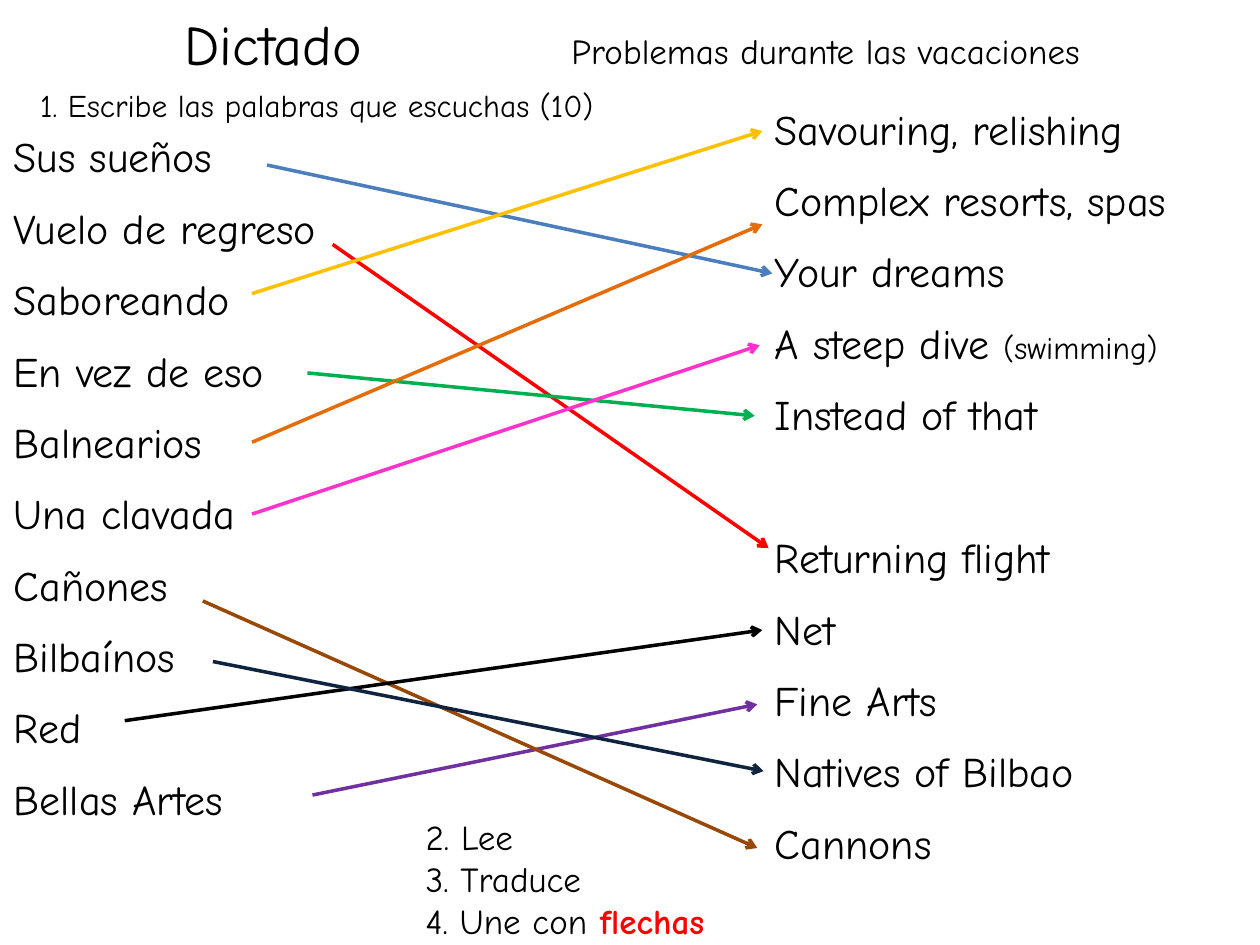
from dataclasses import dataclass

from lxml import etree
from pptx import Presentation
from pptx.dml.color import RGBColor
from pptx.enum.shapes import MSO_CONNECTOR
from pptx.enum.text import MSO_AUTO_SIZE
from pptx.oxml.ns import qn
from pptx.util import Inches, Pt

STRAIGHT = MSO_CONNECTOR.STRAIGHT
GROW = MSO_AUTO_SIZE.SHAPE_TO_FIT_TEXT


@dataclass(frozen=True)
class Theme:
    font: str = "Comic Neue"
    ink: str = "000000"
    accent: str = "FF0000"
    lead: int = 36
    title: int = 32
    word: int = 24
    step: int = 20
    note: int = 18
    gap: int = 12
    skip: int = 41  # one empty row between word pairs
    stroke: int = 2


THEME = Theme()

SPANISH = [
    "Sus sueños", "Vuelo de regreso", "Saboreando", "En vez de eso",
    "Balnearios", "Una clavada", "Cañones", "Bilbaínos", "Red",
    "Bellas Artes",
]
ENGLISH = [
    "Savouring, relishing",
    "Complex resorts, spas",
    "Your dreams",
    [("A steep dive ", {}), ("(swimming)", {"size": THEME.note})],
    "Instead of that",
    "Returning flight",
    "Net",
    "Fine Arts",
    "Natives of Bilbao",
    "Cannons",
]
STEPS = [
    "2. Lee",
    "3. Traduce",
    [("4. Une con", {}), (" flechas", {"color": THEME.accent, "bold": True})],
]
# Start, end and colour of each match, from back to front
ARROWS = [
    ((2.12, 1.31), (6.13, 2.17), "4B7EBC"),
    ((2.64, 1.94), (6.10, 4.35), "FF0000"),
    ((2.00, 2.33), (6.05, 1.04), "FFC000"),
    ((2.44, 2.96), (5.99, 3.30), "00B050"),
    ((2.48, 6.31), (6.01, 5.59), "7030A0"),
    ((2.00, 4.08), (6.03, 2.74), "FF33CC"),
    ((2.00, 3.51), (6.05, 1.78), "E46C0A"),
    ((1.61, 4.77), (6.01, 6.73), "984807"),
    ((0.99, 5.72), (6.05, 5.00), "000000"),
    ((1.69, 5.25), (6.06, 6.12), "0F243E"),
]


def add_run(para, text, size, color=THEME.ink, bold=False):
    run = para.add_run()
    run.text = text
    font = run.font
    font.name, font.size, font.bold = THEME.font, Pt(size), bold
    font.color.rgb = RGBColor.from_string(color)


def add_text(slide, box, lines, size=THEME.word, wrap=False, after=0, skips=()):
    """Add lines, each a string or (text, format) runs; skips get a row above."""
    frame = slide.shapes.add_textbox(*map(Inches, box)).text_frame
    frame.word_wrap = wrap
    frame.auto_size = GROW
    for row, line in enumerate(lines):
        para = frame.add_paragraph() if row else frame.paragraphs[0]
        para.space_after = Pt(after)
        if row in skips:
            para.space_before = Pt(THEME.skip)
        runs = [(line, {})] if isinstance(line, str) else line
        for text, style in runs:
            add_run(para, text, **{"size": size, **style})


def add_title(slide, box, text, size):
    add_text(slide, box, [[(" ", {"size": THEME.lead}), (text, {"size": size})]])


def add_words(slide, box, words, skips=()):
    add_text(slide, box, words, wrap=True, after=THEME.gap, skips=skips)


def add_arrow(slide, start, end, color):
    arrow = slide.shapes.add_connector(STRAIGHT, *map(Inches, start + end))
    arrow.line.color.rgb = RGBColor.from_string(color)
    arrow.line.width = Pt(THEME.stroke)
    props = arrow.line._get_or_add_ln()
    etree.SubElement(props, qn("a:tailEnd"), type="arrow")
    etree.SubElement(props.getparent(), qn("a:effectLst"))


def main():
    deck = Presentation()
    deck.slide_width, deck.slide_height = Inches(10), Inches(7.5)
    slide = deck.slides.add_slide(deck.slide_layouts[6])

    add_title(slide, (1.2, -0.03, 1.98, 0.71), "Dictado", THEME.title)
    add_words(slide, (0.01, 0.99, 3.57, 6.8), SPANISH)
    add_words(slide, (6.05, 0.77, 3.83, 6.23), ENGLISH,
              skips=[ENGLISH.index("Returning flight")])
    add_text(slide, (0.22, 0.63, 4.93, 0.4),
             ["1. Escribe las palabras que escuchas (10)"], size=THEME.note)
    for start, end, color in ARROWS:
        add_arrow(slide, start, end, color)
    add_text(slide, (3.28, 6.42, 2.77, 1.41), STEPS, size=THEME.step)
    add_title(slide, (4.27, -0.04, 4.68, 0.71),
              "Problemas durante las vacaciones", THEME.step)

    deck.save("out.pptx")


if __name__ == "__main__":
    main()
